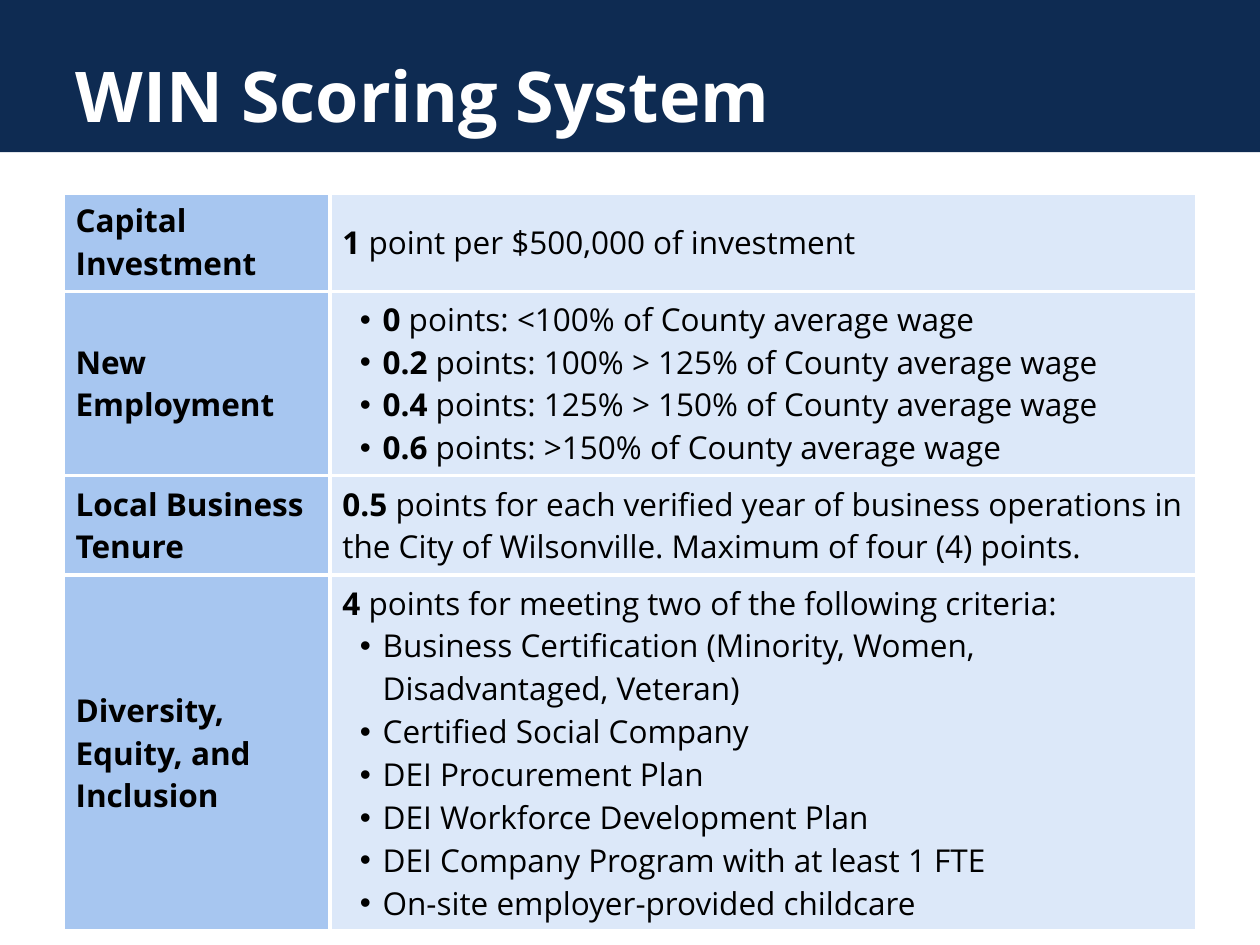
from dataclasses import dataclass

from lxml import etree
from pptx import Presentation
from pptx import util as u
from pptx.dml.color import RGBColor
from pptx.enum import shapes, text
from pptx.oxml.ns import qn

TITLE = "WIN Scoring System"
CRITERIA = [
    ("Capital Investment", 1.45, [("1", " point per $500,000 of investment", False)]),
    ("New Employment", 3.28, [
        ("0", " points: <100% of County average wage", True),
        ("0.2", " points: 100% > 125% of County average wage", True),
        ("0.4", " points: 125% > 150% of County average wage", True),
        ("0.6", " points: >150% of County average wage", True),
    ]),
    ("Local Business Tenure", 2.01, [
        ("0.5", " points for each verified year of business operations in the City of "
                "Wilsonville. Maximum of four (4) points.", False),
    ]),
    ("Diversity, Equity, and Inclusion", 6.81, [
        ("4", " points for meeting two of the following criteria:", False),
        ("", "Business Certification (Minority, Women, Disadvantaged, Veteran)", True),
        ("", "Certified Social Company", True),
        ("", "DEI Procurement Plan", True),
        ("", "DEI Workforce Development Plan", True),
        ("", "DEI Company Program with at least 1 FTE", True),
        ("", "On-site employer-provided childcare", True),
    ]),
]


@dataclass(frozen=True)
class Theme:
    font: str = "Open Sans"
    title_size: int = 40
    body_size: int = 18
    border_width: float = 2.25
    navy: str = "0E2B52"
    label_fill: str = "A7C6F0"
    detail_fill: str = "DCE8F9"
    white: str = "FFFFFF"
    black: str = "000000"


THEME = Theme()
SLIDE_WIDTH, SLIDE_HEIGHT = 25.4, 19.05
MARGIN = 1.27
BAND_HEIGHT = 3.07
TITLE_TOP = 0.76
TABLE_TOP = 3.89
COLUMN_WIDTHS = (5.38, 17.48)
BULLET_INDENT, BULLET_HANG = 0.81, 0.46


def paint(fill, color):
    fill.solid()
    fill.fore_color.rgb = RGBColor.from_string(color)


def add_span(para, words, size, color, bold):
    span = para.add_run()
    span.text = words
    span.font.name = THEME.font
    span.font.size = u.Pt(size)
    span.font.bold = bold
    span.font.color.rgb = RGBColor.from_string(color)


def add_bullet(para):
    properties = para._p.get_or_add_pPr()
    properties.set("marL", str(u.Cm(BULLET_INDENT)))
    properties.set("indent", str(-u.Cm(BULLET_HANG)))
    etree.SubElement(properties, qn("a:buFont")).set("typeface", "Arial")
    etree.SubElement(properties, qn("a:buChar")).set("char", "•")


def style_cell(cell, color):
    properties = cell._tc.get_or_add_tcPr()
    for side in ("lnL", "lnR", "lnT", "lnB"):
        line = etree.SubElement(properties, qn(f"a:{side}"), w=str(u.Pt(THEME.border_width)))
        solid = etree.SubElement(line, qn("a:solidFill"))
        etree.SubElement(solid, qn("a:srgbClr")).set("val", THEME.white)
    paint(cell.fill, color)
    cell.vertical_anchor = text.MSO_ANCHOR.MIDDLE


def fill_cell(cell, color, lines):
    style_cell(cell, color)
    for index, (strong, plain, bulleted) in enumerate(lines):
        frame = cell.text_frame
        para = frame.add_paragraph() if index else frame.paragraphs[0]
        if bulleted:
            add_bullet(para)
        for words, bold in ((strong, True), (plain, False)):
            if words:
                add_span(para, words, THEME.body_size, THEME.black, bold)


def add_header(page):
    title = page.shapes.title
    title.left, title.top = u.Cm(MARGIN), u.Cm(TITLE_TOP)
    title.width = u.Cm(SLIDE_WIDTH - 2 * MARGIN)
    title.height = u.Cm(BAND_HEIGHT - TITLE_TOP)
    title.text_frame.vertical_anchor = text.MSO_ANCHOR.MIDDLE
    para = title.text_frame.paragraphs[0]
    para.alignment = text.PP_ALIGN.LEFT
    add_span(para, TITLE, THEME.title_size, THEME.white, True)

    band = page.shapes.add_shape(
        shapes.MSO_SHAPE.RECTANGLE, 0, 0, u.Cm(SLIDE_WIDTH), u.Cm(BAND_HEIGHT))
    band.shadow.inherit = False
    paint(band.fill, THEME.navy)
    band.line.fill.background()
    title.element.addprevious(band.element)


def add_criteria(page):
    table = page.shapes.add_table(
        len(CRITERIA), len(COLUMN_WIDTHS), u.Cm(MARGIN), u.Cm(TABLE_TOP),
        u.Cm(sum(COLUMN_WIDTHS)), u.Cm(sum(height for _, height, _ in CRITERIA))).table
    table.first_row = table.horz_banding = False
    for column, width in zip(table.columns, COLUMN_WIDTHS):
        column.width = u.Cm(width)
    for row, (label, height, details) in zip(table.rows, CRITERIA):
        row.height = u.Cm(height)
        label_cell, detail_cell = row.cells
        fill_cell(label_cell, THEME.label_fill, [(label, "", False)])
        fill_cell(detail_cell, THEME.detail_fill, details)


def main():
    deck = Presentation()
    deck.slide_width, deck.slide_height = u.Cm(SLIDE_WIDTH), u.Cm(SLIDE_HEIGHT)
    page = deck.slides.add_slide(deck.slide_layouts.get_by_name("Title Only"))
    add_header(page)
    add_criteria(page)
    deck.save("out.pptx")


if __name__ == "__main__":
    main()
